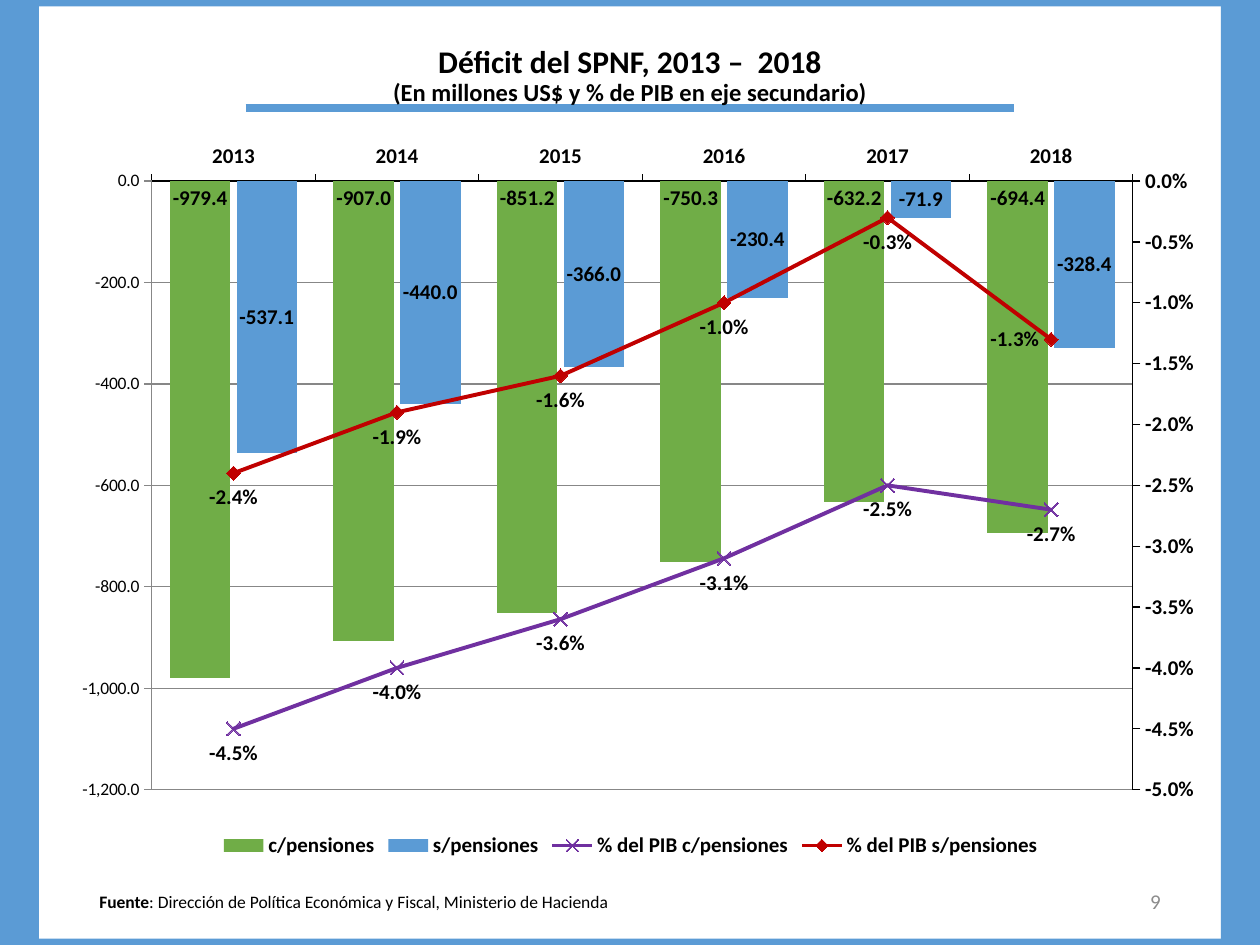
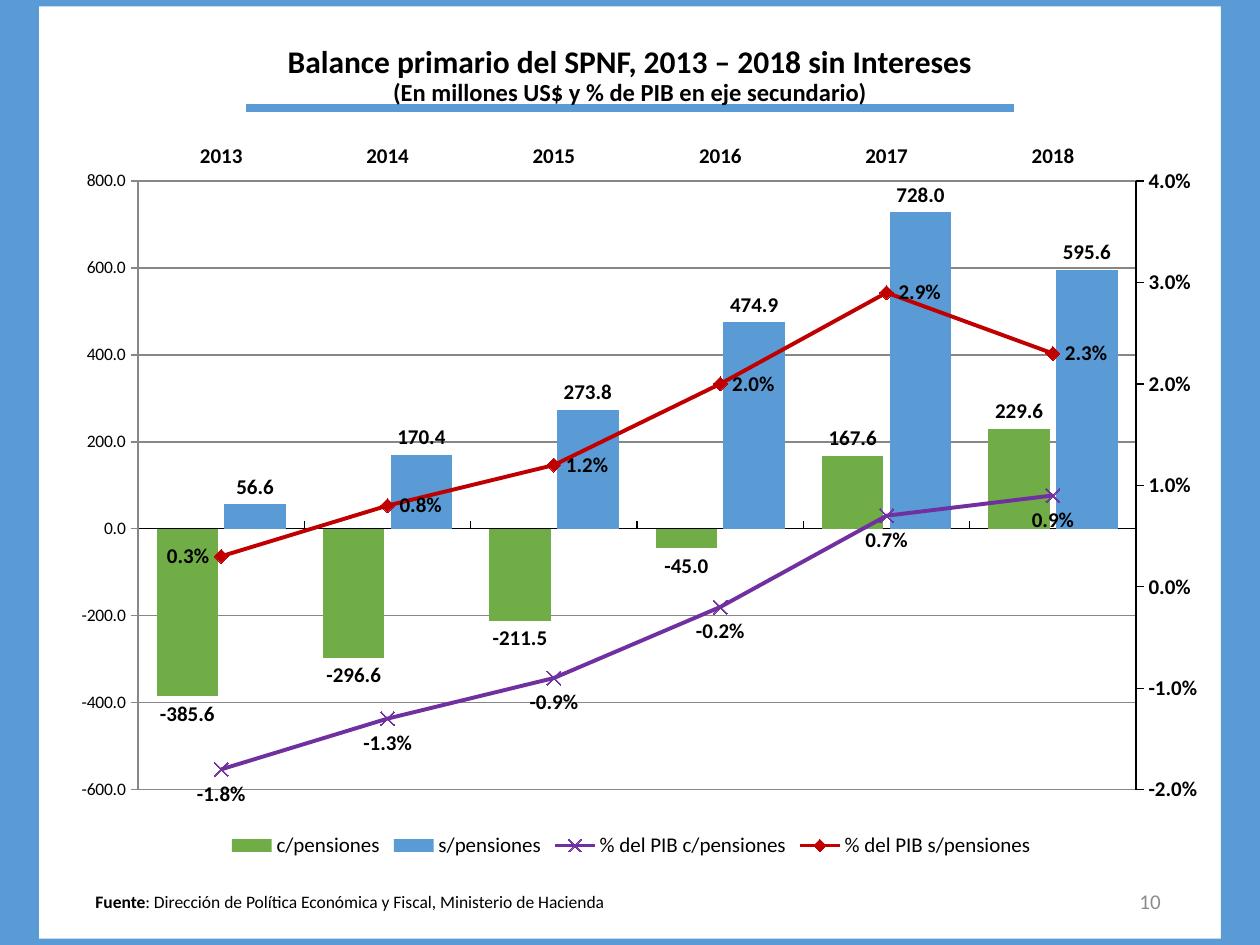
from dataclasses import dataclass

from lxml.etree import SubElement
from pptx import Presentation
from pptx.chart.axis import ValueAxis
from pptx.chart.data import CategoryChartData
from pptx.dml.color import RGBColor
from pptx.enum.chart import (XL_CHART_TYPE, XL_LABEL_POSITION, XL_LEGEND_POSITION,
                             XL_MARKER_STYLE, XL_TICK_LABEL_POSITION, XL_TICK_MARK)
from pptx.enum.shapes import MSO_CONNECTOR, MSO_SHAPE
from pptx.enum.text import MSO_ANCHOR, MSO_AUTO_SIZE, PP_ALIGN
from pptx.oxml import parse_xml
from pptx.oxml.ns import nsdecls, qn
from pptx.util import Inches, Pt


@dataclass(frozen=True)
class Theme:
    font: str = "Calibri"
    black: RGBColor = RGBColor(0x00, 0x00, 0x00)
    gray: RGBColor = RGBColor(0x8C, 0x8C, 0x8C)
    blue: RGBColor = RGBColor(0x5B, 0x9B, 0xD5)
    green: RGBColor = RGBColor(0x70, 0xAD, 0x47)
    purple: RGBColor = RGBColor(0x70, 0x30, 0xA0)
    red: RGBColor = RGBColor(0xC0, 0x00, 0x00)
    title_size: int = 18
    subtitle_size: int = 14
    chart_size: int = 12
    source_size: int = 10


theme = Theme()

SUBTITLE = "(En millones US$ y % de PIB en eje secundario)"
SOURCE = ": Dirección de Política Económica y Fiscal, Ministerio de Hacienda"
YEARS = ["2013", "2014", "2015", "2016", "2017", "2018"]
SERIES_NAMES = ["c/pensiones", "s/pensiones", "% del PIB c/pensiones", "% del PIB s/pensiones"]
AMOUNT_FORMAT = "#,##0.0"
PERCENT_FORMAT = "0.0%"

FRAME_BANDS = [(0, 0, 0.31, 7.5), (9.69, 0, 0.31, 7.5),
               (0.31, 0, 9.38, 0.05), (0.31, 7.45, 9.38, 0.05)]

BELOW, RIGHT = XL_LABEL_POSITION.BELOW, XL_LABEL_POSITION.RIGHT
OUTSIDE = XL_LABEL_POSITION.OUTSIDE_END

# Axis ranges are minimum, maximum and major unit; plot is x, y, width, height as chart fractions.
BALANCES = [
    dict(
        title="Déficit del SPNF, 2013 –  2018", number="9",
        chart_left=0.37, chart_width=9.27, plot=(0.09, 0.07, 0.84, 0.83),
        source_left=0.69, bold_legend=True,
        amount_range=(-1200, 0, 200), percent_range=(-0.05, 0, 0.005),
        label_positions=[XL_LABEL_POSITION.INSIDE_BASE, XL_LABEL_POSITION.CENTER, BELOW, BELOW],
        left_label_point=5,
        values=[
            (-979.4, -907.0, -851.2, -750.3, -632.2, -694.4),
            (-537.1, -440.0, -366.0, -230.4, -71.9, -328.4),
            (-0.045, -0.040, -0.036, -0.031, -0.025, -0.027),
            (-0.024, -0.019, -0.016, -0.010, -0.003, -0.013),
        ],
    ),
    dict(
        title="Balance primario del SPNF, 2013 – 2018 sin Intereses", number="10",
        chart_left=0.35, chart_width=9.32, plot=(0.08, 0.07, 0.85, 0.83),
        source_left=0.66, bold_legend=False,
        amount_range=(-600, 800, 200), percent_range=(-0.02, 0.04, 0.01),
        label_positions=[OUTSIDE, OUTSIDE, BELOW, RIGHT],
        left_label_point=0,
        values=[
            (-385.6, -296.6, -211.5, -45.0, 167.6, 229.6),
            (56.6, 170.4, 273.8, 474.9, 728.0, 595.6),
            (-0.018, -0.013, -0.009, -0.002, 0.007, 0.009),
            (0.003, 0.008, 0.012, 0.020, 0.029, 0.023),
        ],
    ),
]

LINE_PLOT_XML = f"""<c:lineChart {nsdecls('c')}>
  <c:grouping val="standard"/><c:varyColors val="0"/><c:marker val="1"/>
  <c:axId val="5001"/><c:axId val="5002"/>
</c:lineChart>"""
RIGHT_AXIS_XML = f"""<c:valAx {nsdecls('c')}>
  <c:axId val="5002"/><c:scaling><c:orientation val="minMax"/></c:scaling>
  <c:delete val="0"/><c:axPos val="r"/><c:crossAx val="5001"/><c:crosses val="max"/>
</c:valAx>"""
HIDDEN_AXIS_XML = f"""<c:catAx {nsdecls('c')}>
  <c:axId val="5001"/><c:scaling><c:orientation val="minMax"/></c:scaling>
  <c:delete val="1"/><c:axPos val="b"/><c:crossAx val="5002"/><c:crosses val="autoZero"/>
</c:catAx>"""


def style_font(font, size, bold=False, color=theme.black):
    font.name = theme.font
    font.size = Pt(size)
    font.bold = bold
    font.color.rgb = color


def add_text_box(slide, left, top, width, height, alignment, anchor):
    """Add a wrapping text box and return its text frame and first paragraph."""
    box = slide.shapes.add_textbox(Inches(left), Inches(top), Inches(width), Inches(height))
    frame = box.text_frame
    frame.word_wrap = True
    frame.vertical_anchor = anchor
    paragraph = frame.paragraphs[0]
    paragraph.alignment = alignment
    return frame, paragraph


presentation = Presentation()
presentation.slide_width = Inches(10)
presentation.slide_height = Inches(7.5)
blank_layout = presentation.slide_layouts[6]

for balance in BALANCES:
    slide = presentation.slides.add_slide(blank_layout)

    # Frame and title rule
    for left, top, width, height in FRAME_BANDS:
        band = slide.shapes.add_shape(MSO_SHAPE.RECTANGLE, Inches(left), Inches(top),
                                      Inches(width), Inches(height))
        band.shadow.inherit = False
        band.fill.solid()
        band.fill.fore_color.rgb = theme.blue
        band.line.fill.background()
    title_rule = slide.shapes.add_connector(MSO_CONNECTOR.STRAIGHT, Inches(1.95), Inches(0.86),
                                            Inches(8.05), Inches(0.86))
    title_rule.line.color.rgb = theme.blue
    title_rule.line.width = Pt(4.5)
    SubElement(title_rule._element.spPr, qn("a:effectLst"))

    # Title and page number
    frame, paragraph = add_text_box(slide, 0.69, 0.27, 8.62, 0.67,
                                    PP_ALIGN.CENTER, MSO_ANCHOR.MIDDLE)
    paragraph.line_spacing = 0.9
    title_run = paragraph.add_run()
    title_run.text = balance["title"]
    style_font(title_run.font, theme.title_size, bold=True)
    paragraph.add_line_break()
    subtitle_run = paragraph.add_run()
    subtitle_run.text = SUBTITLE
    style_font(subtitle_run.font, theme.subtitle_size, bold=True)

    frame, paragraph = add_text_box(slide, 7.06, 6.95, 2.25, 0.4,
                                    PP_ALIGN.RIGHT, MSO_ANCHOR.MIDDLE)
    paragraph.text = balance["number"]
    style_font(paragraph.font, theme.chart_size, color=theme.gray)

    # Chart: amounts as columns, shares of GDP as lines on the right axis
    chart_data = CategoryChartData()
    chart_data.categories = YEARS
    formats = [AMOUNT_FORMAT, AMOUNT_FORMAT, PERCENT_FORMAT, PERCENT_FORMAT]
    for name, values, number_format in zip(SERIES_NAMES, balance["values"], formats):
        chart_data.add_series(name, values, number_format)
    chart = slide.shapes.add_chart(
        XL_CHART_TYPE.COLUMN_CLUSTERED, Inches(balance["chart_left"]), Inches(1.03),
        Inches(balance["chart_width"]), Inches(5.82), chart_data).chart
    chart.has_title = False
    style_font(chart.font, theme.source_size)

    plot_area = chart._chartSpace.chart.plotArea
    column_plot = plot_area.find(qn("c:barChart"))
    line_plot = parse_xml(LINE_PLOT_XML)
    column_plot.addnext(line_plot)
    for series_element in column_plot.findall(qn("c:ser"))[2:]:
        for column_setting in series_element.findall(qn("c:invertIfNegative")):
            series_element.remove(column_setting)
        line_plot.find(qn("c:marker")).addprevious(series_element)
    right_axis_element = parse_xml(RIGHT_AXIS_XML)
    plot_area.find(qn("c:valAx")).addnext(right_axis_element)
    right_axis_element.addnext(parse_xml(HIDDEN_AXIS_XML))

    for old_layout in plot_area.findall(qn("c:layout")):
        plot_area.remove(old_layout)
    x, y, width, height = balance["plot"]
    plot_area.insert(0, parse_xml(
        f'<c:layout {nsdecls("c")}><c:manualLayout><c:layoutTarget val="inner"/>'
        f'<c:xMode val="edge"/><c:yMode val="edge"/><c:x val="{x}"/><c:y val="{y}"/>'
        f'<c:w val="{width}"/><c:h val="{height}"/></c:manualLayout></c:layout>'))

    # Axes
    right_axis = ValueAxis(right_axis_element)
    for axis, axis_range, number_format in [
            (chart.value_axis, balance["amount_range"], AMOUNT_FORMAT),
            (right_axis, balance["percent_range"], PERCENT_FORMAT)]:
        axis.minimum_scale, axis.maximum_scale, axis.major_unit = axis_range
        axis.major_tick_mark = XL_TICK_MARK.OUTSIDE
        axis.tick_labels.number_format = number_format
        axis.tick_labels.number_format_is_linked = False
    chart.category_axis.major_tick_mark = XL_TICK_MARK.INSIDE
    chart.category_axis.tick_label_position = XL_TICK_LABEL_POSITION.HIGH
    for axis in (chart.category_axis, chart.value_axis, right_axis):
        axis.has_major_gridlines = False
        axis.minor_tick_mark = XL_TICK_MARK.NONE
        axis.format.line.color.rgb = theme.black
        axis.format.line.width = Pt(0.75)
        style_font(axis.tick_labels.font, theme.chart_size, bold=True)

    # Series
    columns, lines = chart.plots
    columns.vary_by_categories = False
    columns.gap_width = 60
    columns.overlap = -10
    for series, color in zip(columns.series, (theme.green, theme.blue)):
        series.invert_if_negative = False
        series.format.fill.solid()
        series.format.fill.fore_color.rgb = color
    for series, color, marker_style in zip(lines.series, (theme.purple, theme.red),
                                           (XL_MARKER_STYLE.X, XL_MARKER_STYLE.DIAMOND)):
        series.smooth = False
        series.format.line.color.rgb = color
        series.format.line.width = Pt(2.25)
        series.marker.style = marker_style
        series.marker.size = 8
        series.marker.format.line.color.rgb = color
        if marker_style == XL_MARKER_STYLE.X:
            series.marker.format.fill.background()
        else:
            series.marker.format.fill.solid()
            series.marker.format.fill.fore_color.rgb = color

    # Data labels
    all_series = [*columns.series, *lines.series]
    for series, position, number_format in zip(all_series, balance["label_positions"], formats):
        labels = series.data_labels
        labels.show_value = True
        labels.position = position
        labels.number_format = number_format
        labels.number_format_is_linked = False
        style_font(labels.font, theme.chart_size, bold=True)
    left_label = all_series[-1].points[balance["left_label_point"]].data_label
    style_font(left_label.font, theme.chart_size, bold=True)
    left_label.position = XL_LABEL_POSITION.LEFT

    chart.has_legend = True
    chart.legend.position = XL_LEGEND_POSITION.BOTTOM
    chart.legend.include_in_layout = False
    style_font(chart.legend.font, theme.chart_size, bold=balance["bold_legend"])

    # Source line
    frame, paragraph = add_text_box(slide, balance["source_left"], 7.02, 8.26, 0.27,
                                    PP_ALIGN.JUSTIFY, MSO_ANCHOR.TOP)
    frame.auto_size = MSO_AUTO_SIZE.SHAPE_TO_FIT_TEXT
    for text, bold in (("Fuente", True), (SOURCE, False)):
        run = paragraph.add_run()
        run.text = text
        style_font(run.font, theme.source_size, bold)

presentation.save("out.pptx")
